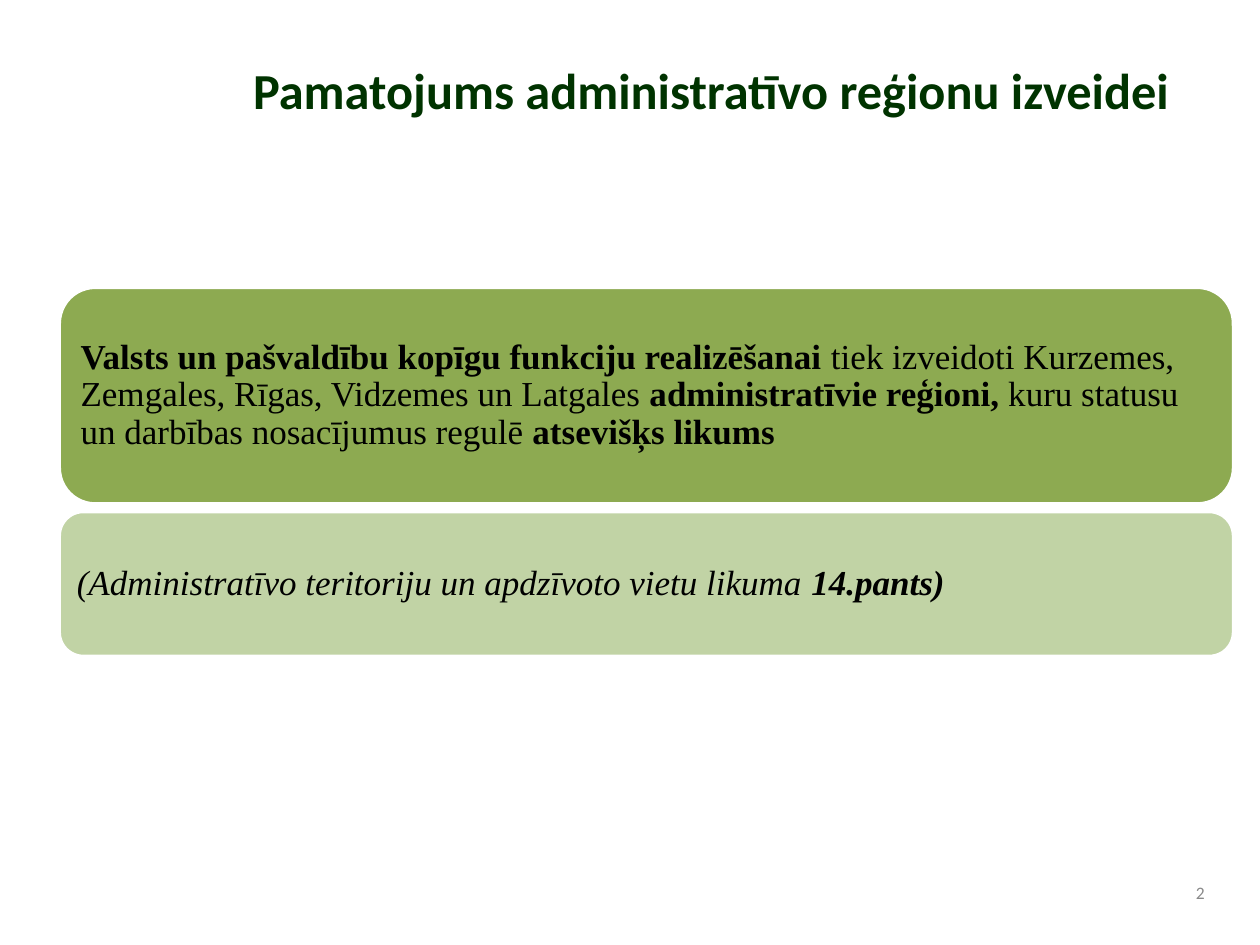
from pptx import Presentation
from pptx.dml.color import RGBColor as RGB
from pptx.enum.shapes import MSO_SHAPE as Shape
from pptx.enum.text import MSO_ANCHOR as Anchor, PP_ALIGN as Align
from pptx.util import Inches, Pt

INK = {"title": "003300", "text": "000000", "page": "898989",
       "dark": "8DAA51", "light": "C1D3A5", "line": "FFFFFF"}
SANS, SERIF = "Calibri", "Times New Roman"

TITLE = "Pamatojums administratīvo reģionu izveidei"
PAGE = "2"
CARDS = [
    {"fill": "dark", "top": 2.28, "tall": 1.72, "pad": 0.09, "italic": False,
     "runs": [("Valsts un pašvaldību kopīgu funkciju realizēšanai ", True),
              ("tiek izveidoti Kurzemes, Zemgales, Rīgas, Vidzemes un Latgales ", False),
              ("administratīvie reģioni,", True),
              (" kuru statusu un darbības nosacījumus regulē ", False),
              ("atsevišķs likums", True)]},
    {"fill": "light", "top": 4.06, "tall": 1.15, "pad": 0.06, "italic": True,
     "runs": [("(Administratīvo teritoriju un apdzīvoto vietu likuma ", False),
              ("14.pants)", True)]},
]
LEFT, WIDE = 0.47, 9.32


def add_text(slide, place, runs, font, size, ink, align=Align.LEFT,
             anchor=Anchor.MIDDLE, inset=(0.1, 0.05), italic=False):
    frame = slide.shapes.add_textbox(*map(Inches, place)).text_frame
    frame.word_wrap = True
    frame.vertical_anchor = anchor
    frame.margin_left = frame.margin_right = Inches(inset[0])
    frame.margin_top = frame.margin_bottom = Inches(inset[1])
    para = frame.paragraphs[0]
    para.alignment = align
    for words, bold in runs:
        run = para.add_run()
        run.text = words
        run.font.name = font
        run.font.size = Pt(size)
        run.font.bold = bold
        run.font.italic = italic
        run.font.color.rgb = RGB.from_string(INK[ink])
    return para


def add_card(slide, card):
    top, tall, pad = card["top"], card["tall"], card["pad"]
    box = slide.shapes.add_shape(
        Shape.ROUNDED_RECTANGLE, *map(Inches, (LEFT, top, WIDE, tall)))
    box.shadow.inherit = False
    box.fill.solid()
    box.fill.fore_color.rgb = RGB.from_string(INK[card["fill"]])
    box.line.color.rgb = RGB.from_string(INK["line"])
    box.line.width = Pt(2)
    place = (LEFT + pad, top + pad, WIDE - 2 * pad, tall - 2 * pad)
    para = add_text(slide, place, card["runs"], SERIF, 20, "text",
                    inset=(0.08, 0.08), italic=card["italic"])
    para.line_spacing = 0.9


def main():
    deck = Presentation()
    deck.slide_width, deck.slide_height = Inches(10), Inches(7.5)
    slide = deck.slides.add_slide(deck.slide_layouts[6])
    add_text(slide, (1.79, 0.42, 7.71, 1.13), [(TITLE, True)], SANS, 28.8,
             "title", Align.CENTER, Anchor.TOP)
    for card in CARDS:
        add_card(slide, card)
    add_text(slide, (9.33, 6.92, 0.33, 0.33), [(PAGE, False)], SANS, 10,
             "page", Align.RIGHT)
    deck.save("out.pptx")


if __name__ == "__main__":
    main()
